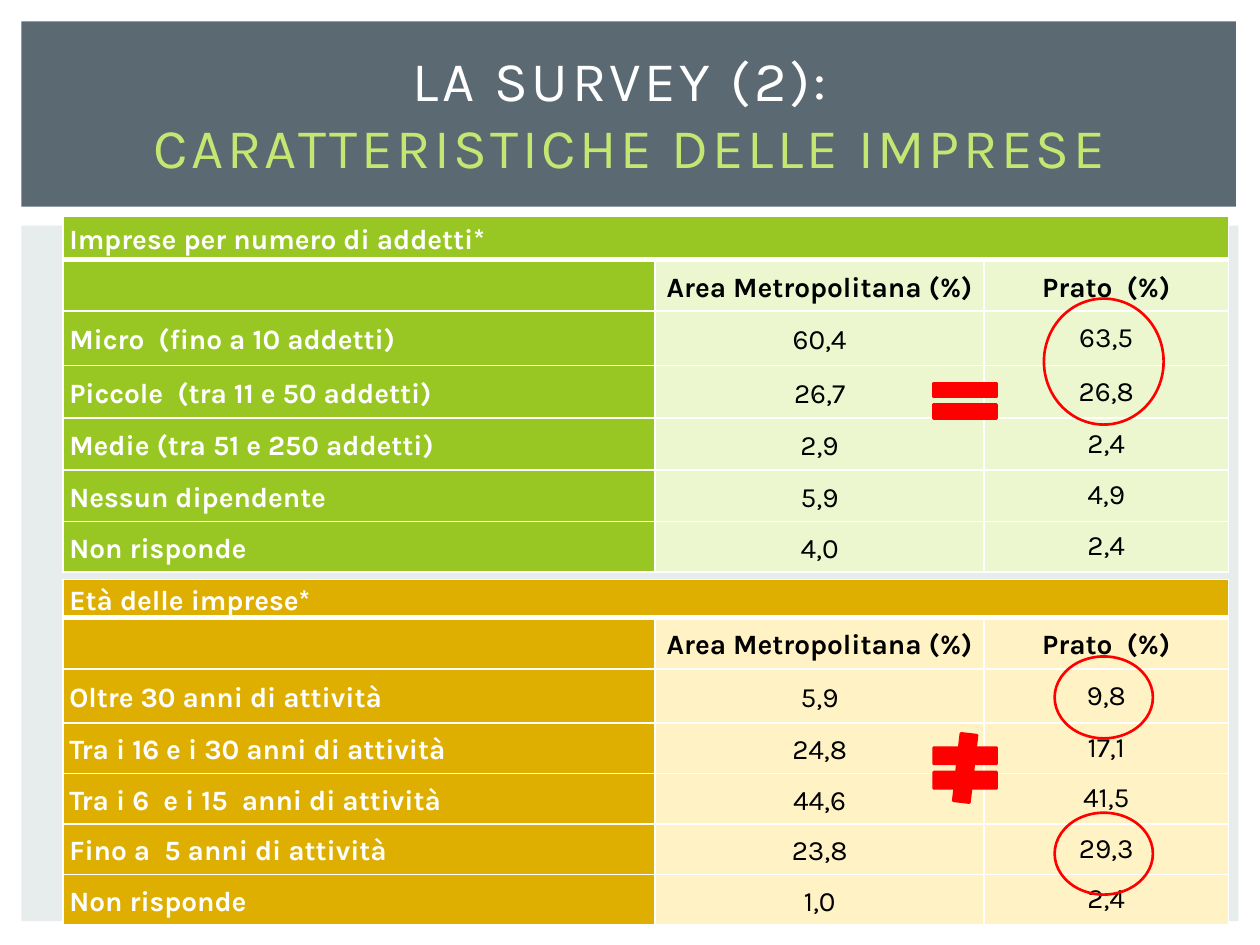
from pptx import Presentation
from pptx.dml.color import RGBColor
from pptx.enum.shapes import MSO_SHAPE as Shape
from pptx.enum.text import MSO_ANCHOR as Anchor, PP_ALIGN as Align
from pptx.oxml.ns import qn
from pptx.util import Inches, Pt
from lxml.etree import SubElement

# Content
TITLE = ("LA SURVEY (2): ", "CARATTERISTICHE DELLE IMPRESE")
HEADS = ("", "Area Metropolitana (%)", "Prato  (%)")
SIZES = [
    ("Imprese per numero di addetti*", "", ""),
    HEADS,
    ("Micro  (fino a 10 addetti)", "60,4", "63,5"),
    ("Piccole  (tra 11 e 50 addetti)", "26,7", "26,8"),
    ("Medie (tra 51 e 250 addetti)", "2,9", "2,4"),
    ("Nessun dipendente", "5,9", "4,9"),
    ("Non risponde", "4,0", "2,4"),
]
AGES = [
    ("Età delle imprese*", "", ""),
    HEADS,
    ("Oltre 30 anni di attività", "5,9", "9,8"),
    ("Tra i 16 e i 30 anni di attività", "24,8", "17,1"),
    ("Tra i 6  e i 15  anni di attività", "44,6", "41,5"),
    ("Fino a  5 anni di attività", "23,8", "29,3"),
    ("Non risponde", "1,0", "2,4"),
]

# Look and grid, in inches
FONT = "Karla"
COLORS = {
    "white": "FFFFFF", "black": "000000", "red": "FF0000",
    "slate": "5B6973", "mist": "E7ECED", "lime": "C5E672",
    "green": "98C723", "pale green": "ECF7D0",
    "gold": "DEAE00", "pale gold": "FFF3C5",
}
LEFT = 0.5
COLS = (4.7, 2.61, 1.94)
TABLES = [  # rows, top, row heights, colour
    (SIZES, 1.72, (0.34, 0.41, 0.43, 0.42, 0.41, 0.41, 0.4), "green"),
    (AGES, 4.6, (0.17, 0.41, 0.43, 0.4, 0.4, 0.4, 0.4), "gold"),
]
RINGS = [(2.37, 0.95, 1), (6.45, 0.78, 0.65), (5.21, 0.78, 0.65)]  # top, width, height
SIGNS = [(Shape.MATH_EQUAL, 2.94, 0.48, ()),
         (Shape.MATH_NOT_EQUAL, 5.82, 0.55, (0.235, 57.891, 0.118))]
RING_MID, SIGN_LEFT, SIGN_WIDTH = 8.76, 7.32, 0.68


def rgb(name):
    return RGBColor.from_string(COLORS[name])


def style(run, size, color, bold=False):
    font = run.font
    font.name, font.size, font.bold = FONT, Pt(size), bold
    font.color.rgb = rgb(color)


def draw(kind, box, fill=None, line=None):
    shape = slide.shapes.add_shape(kind, *map(Inches, box))
    shape.shadow.inherit = False
    if fill:
        shape.fill.solid()
        shape.fill.fore_color.rgb = rgb(fill)
    else:
        shape.fill.background()
    if line:
        shape.line.color.rgb = rgb(line)
        shape.line.width = Pt(1.5)
    else:
        shape.line.fill.background()
    return shape


def edge(cell, low):
    props = cell._tc.get_or_add_tcPr()
    for side, width in (("L", 1), ("R", 1), ("T", 1), ("B", low)):
        line = SubElement(props, qn(f"a:ln{side}"), w=str(Pt(width)))
        fill = SubElement(line, qn("a:solidFill"))
        SubElement(fill, qn("a:srgbClr"), val=COLORS["white"])


def fill_cell(cell, text, row, col, color):
    dark = row == 0 or col == 0
    edge(cell, 3 if row == 0 else 1)
    cell.fill.solid()
    cell.fill.fore_color.rgb = rgb(color if dark else f"pale {color}")
    cell.vertical_anchor = Anchor.MIDDLE
    cell.margin_left = cell.margin_right = Inches(0.05)
    cell.margin_top = cell.margin_bottom = 0
    if not text:
        return
    para = cell.text_frame.paragraphs[0]
    para.text = text
    para.alignment = Align.LEFT if dark else Align.CENTER
    if row < 2 or col < 2:
        para.line_spacing = 1.15
    style(para.runs[0], 16, "white" if dark else "black", dark or row == 1)


def add_grid(rows, top, heights, color):
    box = (LEFT, top, sum(COLS), sum(heights))
    table = slide.shapes.add_table(len(rows), len(COLS), *map(Inches, box)).table
    table.horz_banding = False
    for col, width in zip(table.columns, COLS):
        col.width = Inches(width)
    for row, height in zip(table.rows, heights):
        row.height = Inches(height)
    for r, row in enumerate(rows):
        for c, text in enumerate(row):
            fill_cell(table.cell(r, c), text, r, c, color)
    table.cell(0, 0).merge(table.cell(0, len(COLS) - 1))


prs = Presentation()
prs.slide_width, prs.slide_height = Inches(10), Inches(7.5)
slide = prs.slides.add_slide(prs.slide_layouts[5])

# Panels, with the title in front of them
draw(Shape.RECTANGLE, (0.17, 1.79, 9.66, 5.52), "mist")
draw(Shape.RECTANGLE, (0.17, 0.17, 9.64, 1.47), "slate")
title = slide.shapes.title
slide.shapes._spTree.append(title._element)
title.left, title.top, title.width, title.height = map(Inches, (0.5, 0.3, 9, 1.19))
title.text_frame.vertical_anchor = Anchor.MIDDLE
head = title.text_frame.paragraphs[0]
head.text = "\v".join(TITLE)
head.alignment = Align.CENTER
for run, color in zip(head.runs, ("white", "lime")):
    style(run, 32, color)
    run.font._element.set("spc", "200")

# Tables
for grid in TABLES:
    add_grid(*grid)

# Rings and comparison signs
for top, width, height in RINGS:
    draw(Shape.OVAL, (RING_MID - width / 2, top, width, height), line="red")
for kind, top, height, bends in SIGNS:
    sign = draw(kind, (SIGN_LEFT, top, SIGN_WIDTH, height), "red", "red")
    for i, bend in enumerate(bends):
        sign.adjustments[i] = bend

prs.save("out.pptx")
